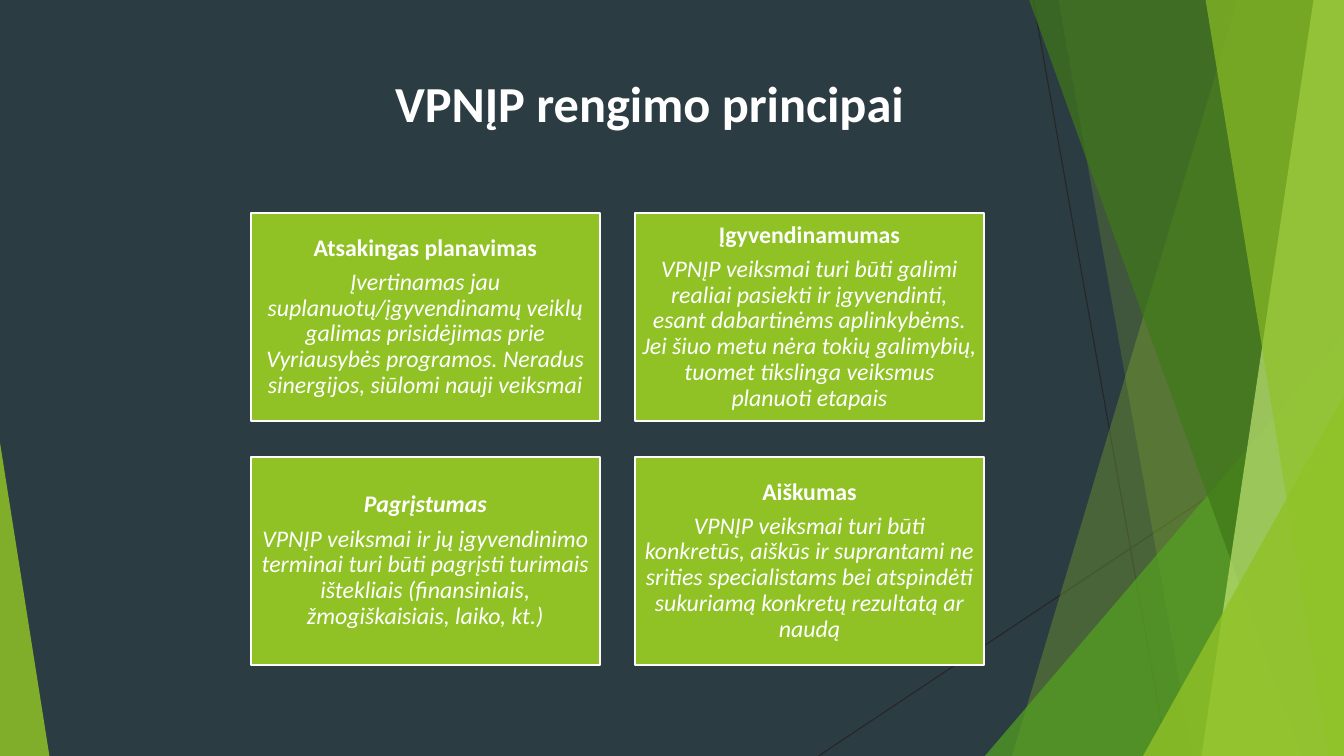
from lxml import etree
from pptx import Presentation
from pptx.dml.color import RGBColor
from pptx.enum.shapes import MSO_CONNECTOR, MSO_SHAPE
from pptx.enum.text import MSO_ANCHOR, PP_ALIGN
from pptx.oxml.ns import qn
from pptx.util import Inches, Pt

STRAIGHT = MSO_CONNECTOR.STRAIGHT
RECTANGLE = MSO_SHAPE.RECTANGLE
TRIANGLE = MSO_SHAPE.ISOSCELES_TRIANGLE
CENTER = PP_ALIGN.CENTER
MIDDLE = MSO_ANCHOR.MIDDLE
TOP = MSO_ANCHOR.TOP

NAVY, GREEN, WHITE, BLACK = "2C3C43", "90C226", "FFFFFF", "262626"
LEAF, FOREST, LIME = "54A021", "3F7819", "C0E474"

# Top and bottom x of the slanted left edge, colour, opacity
BACK_BANDS = [(92.1, 75.3, GREEN, 30), (78.75, 88.73, GREEN, 20)]
FRONT_BANDS = [
    (76.58, 96.83, FOREST, 70),
    (97.73, 89.4, LIME, 70),
    (89.7, 98.85, GREEN, 65),
]

# Heading, whether it is italic, body
PRINCIPLES = [
    ("Atsakingas planavimas", False,
     "Įvertinamas jau suplanuotų/įgyvendinamų veiklų galimas prisidėjimas prie "
     "Vyriausybės programos. Neradus sinergijos, siūlomi nauji veiksmai"),
    ("Įgyvendinamumas", False,
     "VPNĮP veiksmai turi būti galimi realiai pasiekti ir įgyvendinti, esant "
     "dabartinėms aplinkybėms. Jei šiuo metu nėra tokių galimybių, tuomet "
     "tikslinga veiksmus planuoti etapais"),
    ("Pagrįstumas", True,
     "VPNĮP veiksmai ir jų įgyvendinimo terminai turi būti pagrįsti turimais "
     "ištekliais (finansiniais, žmogiškaisiais, laiko, kt.)"),
    ("Aiškumas", False,
     "VPNĮP veiksmai turi būti konkretūs, aiškūs ir suprantami ne srities "
     "specialistams bei atspindėti sukuriamą konkretų rezultatą ar naudą"),
]


def color(value):
    return RGBColor.from_string(value)


class SlideBuilder:
    """Draws on one slide; all lengths are percentages of its width and height."""

    font_name = "Calibri"

    def __init__(self, presentation):
        self.width = presentation.slide_width
        self.height = presentation.slide_height
        self.slide = presentation.slides.add_slide(presentation.slide_layouts[6])
        self.shapes = self.slide.shapes

    def background(self, fill):
        background_fill = self.slide.background.fill
        background_fill.solid()
        background_fill.fore_color.rgb = color(fill)

    def point(self, x, y):
        return round(self.width * x / 100), round(self.height * y / 100)

    def line(self, start, end):
        connector = self.shapes.add_connector(STRAIGHT, *self.point(*start), *self.point(*end))
        connector.line.color.rgb = color(BLACK)
        connector.line.width = Pt(0.75)
        etree.SubElement(connector._element.spPr, qn("a:effectLst"))

    def paint(self, shape, fill, opacity=100):
        shape.shadow.inherit = False
        shape.line.fill.background()
        shape.fill.solid()
        shape.fill.fore_color.rgb = color(fill)
        if opacity < 100:
            fill_color = shape._element.spPr.find(qn("a:solidFill"))[0]
            etree.SubElement(fill_color, qn("a:alpha"), val=str(opacity * 1000))

    def band(self, top_x, bottom_x, fill, opacity):
        """Full-height band from a slanted left edge to the slide's right edge."""
        builder = self.shapes.build_freeform(*self.point(top_x, 0))
        corners = [(100, 0), (100, 100), (bottom_x, 100)]
        builder.add_line_segments([self.point(*corner) for corner in corners])
        self.paint(builder.convert_to_shape(), fill, opacity)

    def triangle(self, left, top, width, apex, fill, opacity):
        """Triangle standing on the slide's bottom edge."""
        shape = self.shapes.add_shape(
            TRIANGLE, *self.point(left, top), *self.point(width, 100 - top))
        shape.adjustments[0] = apex
        self.paint(shape, fill, opacity)

    def set_text(self, paragraph, text, size, bold=False, italic=False):
        paragraph.text = text
        paragraph.alignment = CENTER
        font = paragraph.font
        font.name, font.size = self.font_name, Pt(size)
        font.bold, font.italic = bold, italic
        font.color.rgb = color(WHITE)

    def title(self, text, left, top, width, height):
        box = self.shapes.add_textbox(*self.point(left, top), *self.point(width, height))
        frame = box.text_frame
        frame.word_wrap = True
        frame.vertical_anchor = TOP
        self.set_text(frame.paragraphs[0], text, 36, bold=True)

    def card(self, left, top, width, height, heading, heading_italic, body):
        shape = self.shapes.add_shape(
            RECTANGLE, *self.point(left, top), *self.point(width, height))
        self.paint(shape, GREEN)
        shape.line.color.rgb = color(WHITE)
        shape.line.width = Pt(1.5)
        frame = shape.text_frame
        frame.word_wrap = True
        frame.vertical_anchor = MIDDLE
        frame.margin_left = frame.margin_right = Inches(0.07)
        frame.margin_top = frame.margin_bottom = Inches(0.07)
        self.set_text(frame.paragraphs[0], heading, 17, bold=True, italic=heading_italic)
        self.set_text(frame.add_paragraph(), body, 17, italic=True)
        for paragraph in frame.paragraphs:
            paragraph.line_spacing = 0.9
            paragraph.space_after = Pt(6)


def main():
    presentation = Presentation()
    presentation.slide_width = Inches(13.33)
    presentation.slide_height = Inches(7.5)
    builder = SlideBuilder(presentation)

    builder.background(NAVY)
    builder.line((76.88, 0), (86.85, 100))
    builder.line((100, 53.73), (60.9, 100))
    for band in BACK_BANDS:
        builder.band(*band)
    builder.triangle(73.28, 44.4, 26.72, 1, LEAF, 72)
    for band in FRONT_BANDS:
        builder.band(*band)
    builder.triangle(85.05, 52.4, 14.95, 1, GREEN, 80)
    builder.triangle(0, 58.53, 3.68, 0, GREEN, 85)

    builder.title("VPNĮP rengimo principai", 5.55, 8.93, 85.58, 19.2)
    for index, principle in enumerate(PRINCIPLES):
        row, column = divmod(index, 2)
        builder.card(18.68 + 28.58 * column, 28.13 + 32.27 * row, 25.95, 27.6, *principle)

    presentation.save("out.pptx")


if __name__ == "__main__":
    main()
